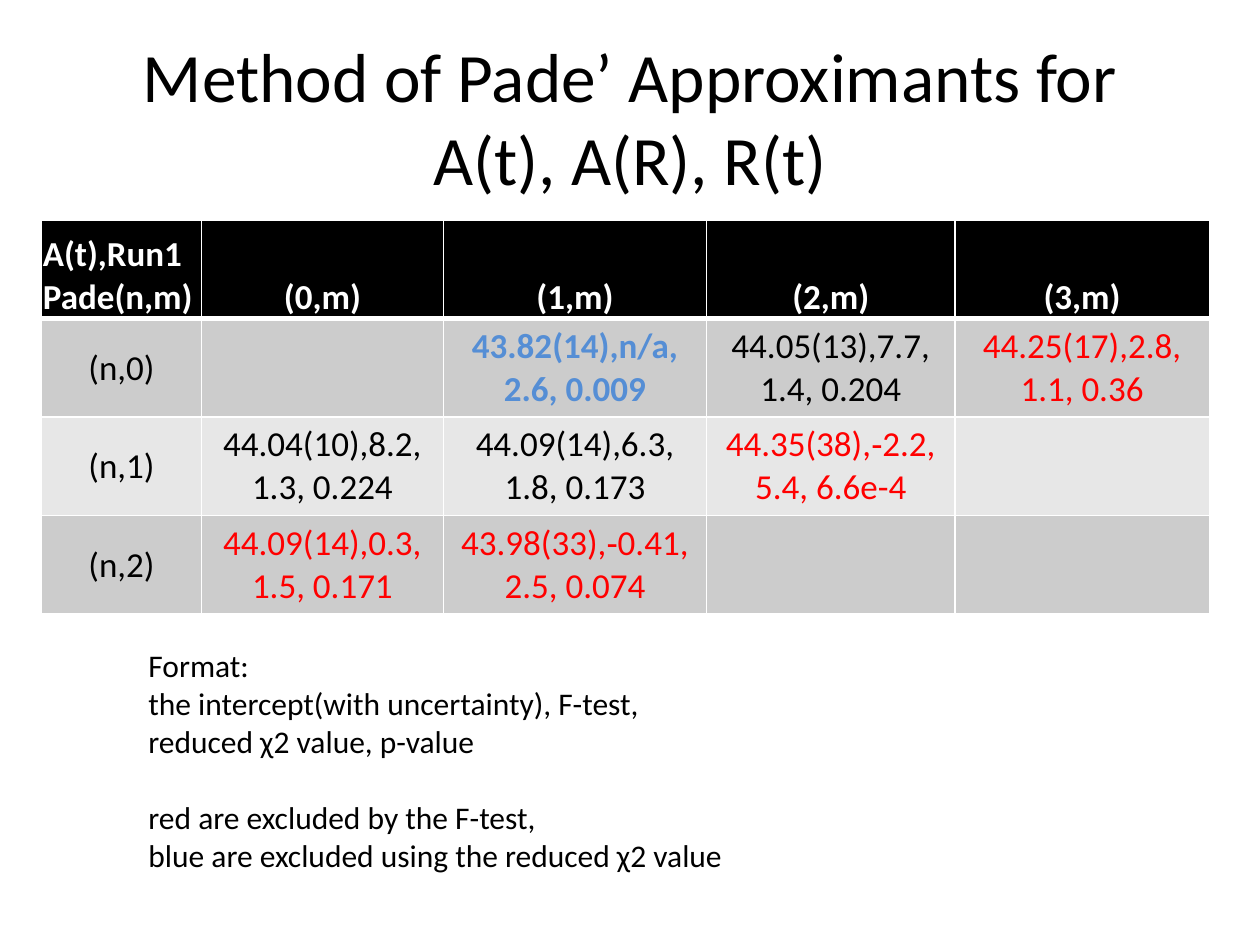
import pptx
import pptx.util
import pptx.dml.color
import pptx.enum.text
import pptx.oxml
import pptx.oxml.ns

Inches, Pt = pptx.util.Inches, pptx.util.Pt
ALIGN = pptx.enum.text.PP_ALIGN
ANCHOR = pptx.enum.text.MSO_ANCHOR

FONT = "Calibri"
HUES = {"black": "000000", "white": "FFFFFF", "red": "FF0000",
        "blue": "558ED5", "dark": "CCCCCC", "light": "E7E7E7"}
TITLE = "Method of Pade’ Approximants for\vA(t), A(R), R(t)"
HEAD = ["A(t),Run1\nPade(n,m)", "(0,m)", "(1,m)", "(2,m)", "(3,m)"]
BODY = [
    ["(n,0)", "", "43.82(14),n/a,\n2.6, 0.009", "44.05(13),7.7,\n1.4, 0.204",
     "44.25(17),2.8,\n1.1, 0.36"],
    ["(n,1)", "44.04(10),8.2,\n1.3, 0.224", "44.09(14),6.3,\n1.8, 0.173",
     "44.35(38),‑2.2,\n5.4, 6.6e-4", ""],
    ["(n,2)", "44.09(14),0.3,\n1.5, 0.171", "43.98(33),‑0.41,\n2.5, 0.074", "", ""],
]
MARKS = {(1, 2): "blue", (1, 4): "red", (2, 3): "red", (3, 1): "red", (3, 2): "red"}
COLS = [1.27, 1.92, 2.09, 1.97, 2.02]
ROWS = [0.78, 0.64, 0.64, 0.64]
NOTES = [
    ["Format:", "the intercept(with uncertainty), F-test,", "reduced χ2 value, p-value"],
    ["red are excluded by the F-test,", "blue are excluded using the reduced χ2 value"],
]


def style(para, size, hue="black", bold=False, align=ALIGN.LEFT):
    para.alignment = align
    font = para.font
    font.name, font.size, font.bold = FONT, Pt(size), bold
    font.color.rgb = pptx.dml.color.RGBColor.from_string(HUES[hue])


def border(cell, row):
    props = cell._tc.get_or_add_tcPr()
    sides = {"L": 1, "R": 1, "T": 3 if row == 1 else 1, "B": 3 if row == 0 else 1}
    for spot, (side, width) in enumerate(sides.items()):
        props.insert(spot, pptx.oxml.parse_xml(
            f'<a:ln{side} {pptx.oxml.ns.nsdecls("a")} w="{Pt(width)}"><a:solidFill>'
            f'<a:srgbClr val="{HUES["white"]}"/></a:solidFill></a:ln{side}>'))


def fill(cell, row, col, text):
    top = row == 0
    shade = "black" if top else "dark" if row % 2 else "light"
    cell.fill.solid()
    cell.fill.fore_color.rgb = pptx.dml.color.RGBColor.from_string(HUES[shade])
    border(cell, row)
    cell.vertical_anchor = ANCHOR.BOTTOM if top else ANCHOR.MIDDLE
    if top or col == 0:
        cell.margin_left = cell.margin_right = cell.margin_top = Inches(0.01)
        cell.margin_bottom = 0
    hue = "white" if top else MARKS.get((row, col), "black")
    align = ALIGN.LEFT if top and col == 0 else ALIGN.CENTER
    cell.text = text
    for para in cell.text_frame.paragraphs:
        style(para, 20, hue, top or hue == "blue", align)


def main():
    deck = pptx.Presentation()
    deck.slide_width, deck.slide_height = Inches(10), Inches(7.5)
    slide = deck.slides.add_slide(deck.slide_layouts[5])

    title = slide.shapes.title
    title.left, title.top = Inches(0.5), Inches(0.3)
    title.width, title.height = Inches(9), Inches(1.25)
    title.text_frame.text = TITLE
    title.text_frame.vertical_anchor = ANCHOR.MIDDLE
    style(title.text_frame.paragraphs[0], 39.6, align=ALIGN.CENTER)

    grid = [HEAD] + BODY
    table = slide.shapes.add_table(len(ROWS), len(COLS), Inches(0.33), Inches(1.75),
                                   Inches(sum(COLS)), Inches(sum(ROWS))).table
    for col, width in zip(table.columns, COLS):
        col.width = Inches(width)
    for row, height in zip(table.rows, ROWS):
        row.height = Inches(height)
    for r, line in enumerate(grid):
        for c, text in enumerate(line):
            fill(table.cell(r, c), r, c, text)

    box = slide.shapes.add_textbox(Inches(1.08), Inches(5.08), Inches(7.33), Inches(1.92))
    frame = box.text_frame
    frame.word_wrap = True
    frame.text = "\n".join(sum(NOTES, []))
    for para in frame.paragraphs:
        style(para, 18)
    frame.paragraphs[len(NOTES[0])].space_before = Pt(22)

    deck.save("out.pptx")


if __name__ == "__main__":
    main()
